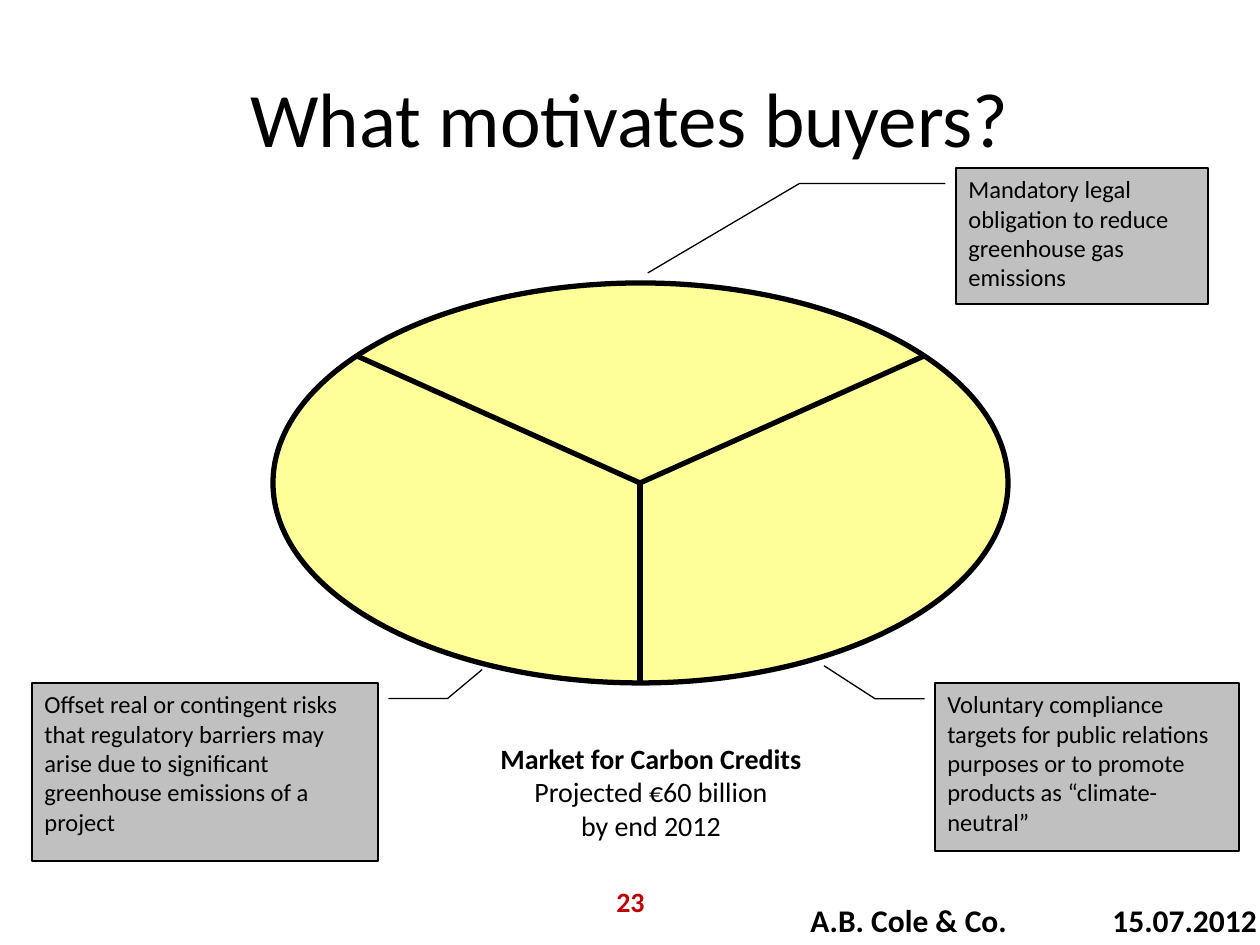
from dataclasses import dataclass
from typing import NamedTuple

from lxml.etree import SubElement
from pptx import Presentation
from pptx.dml.color import RGBColor
from pptx.enum.shapes import MSO_CONNECTOR as Connector, MSO_SHAPE as Shape
from pptx.enum.text import MSO_ANCHOR as Anchor, PP_ALIGN as Align
from pptx.oxml.ns import qn
from pptx.util import Emu, Pt

EMU_PER_PX = 914400 / 126
FONT = "Calibri"
BLACK = RGBColor(0x00, 0x00, 0x00)
YELLOW = RGBColor(0xFF, 0xFF, 0x99)
GREY = RGBColor(0xC0, 0xC0, 0xC0)
RED = RGBColor(0xC0, 0x00, 0x00)


def px(length: int) -> Emu:
    return Emu(round(length * EMU_PER_PX))


class Box(NamedTuple):
    left: int
    top: int
    width: int
    height: int

    def emu(self) -> list[Emu]:
        return [px(length) for length in self]


class Point(NamedTuple):
    x: int
    y: int


@dataclass(frozen=True)
class Motive:
    box: Box
    text: str
    leader: tuple[float, ...]


MARKET = Box(273, 283, 735, 400)
CENTRE = Point(MARKET.left + MARKET.width // 2, MARKET.top + MARKET.height // 2)
RIM = [Point(357, 356), Point(924, 356), Point(CENTRE.x, MARKET.top + MARKET.height)]

MOTIVES = [
    Motive(
        Box(956, 168, 252, 136),
        "Mandatory legal obligation to reduce greenhouse gas emissions",
        (0.115, -0.042, 0.115, -0.622, 0.772, -1.223),
    ),
    Motive(
        Box(32, 683, 346, 178),
        "Offset real or contingent risks that regulatory barriers may arise "
        "due to significant greenhouse emissions of a project",
        (0.088, 1.03, 0.088, 1.201, -0.075, 1.301),
    ),
    Motive(
        Box(935, 683, 304, 168),
        "Voluntary compliance targets for public relations purposes "
        "or to promote products as “climate-neutral”",
        (0.094, -0.034, 0.094, -0.197, -0.103, -0.365),
    ),
]


def add_run(paragraph, text: str, size: int, bold: bool = False, color: RGBColor = BLACK) -> None:
    run = paragraph.add_run()
    run.text = text
    run.font.name = FONT
    run.font.size = Pt(size)
    run.font.bold = bold
    run.font.color.rgb = color


def style(shape, fill: RGBColor, weight: float) -> None:
    shape.shadow.inherit = False
    shape.fill.solid()
    shape.fill.fore_color.rgb = fill
    shape.line.color.rgb = BLACK
    shape.line.width = Pt(weight)


def add_divider(slide, start: Point, end: Point) -> None:
    divider = slide.shapes.add_connector(
        Connector.STRAIGHT, px(start.x), px(start.y), px(end.x), px(end.y)
    )
    divider.line.color.rgb = BLACK
    divider.line.width = Pt(3)
    SubElement(divider._element.spPr, qn("a:effectLst"))


def add_motive(slide, motive: Motive) -> None:
    callout = slide.shapes.add_shape(Shape.LINE_CALLOUT_2, *motive.box.emu())
    style(callout, GREY, 0.75)
    for index, value in enumerate(motive.leader):
        callout.adjustments[index] = value
    frame = callout.text_frame
    frame.word_wrap = True
    frame.vertical_anchor = Anchor.TOP
    paragraph = frame.paragraphs[0]
    paragraph.alignment = Align.LEFT
    add_run(paragraph, motive.text, 14)


def add_label(slide, box: Box, align: Align, anchor: Anchor = Anchor.TOP):
    frame = slide.shapes.add_textbox(*box.emu()).text_frame
    frame.word_wrap = True
    frame.vertical_anchor = anchor
    paragraph = frame.paragraphs[0]
    paragraph.alignment = align
    return frame, paragraph


def add_footer(slide) -> None:
    frame, paragraph = add_label(slide, Box(798, 895, 462, 50), Align.LEFT)
    frame.margin_right = 0
    tabs = SubElement(paragraph._p.get_or_add_pPr(), qn("a:tabLst"))
    SubElement(tabs, qn("a:tab"), pos=str(px(302)), algn="l")
    add_run(paragraph, "A.B. Cole & Co.\t15.07.2012", 18, bold=True)


def main() -> None:
    deck = Presentation()
    deck.slide_width, deck.slide_height = px(1260), px(945)
    slide = deck.slides.add_slide(deck.slide_layouts[5])

    title = slide.shapes.title
    title.left, title.top, title.width, title.height = Box(63, 38, 1134, 157).emu()
    title.text_frame.vertical_anchor = Anchor.MIDDLE
    heading = title.text_frame.paragraphs[0]
    heading.alignment = Align.CENTER
    add_run(heading, "What motivates buyers?", 44)

    market = slide.shapes.add_shape(Shape.OVAL, *MARKET.emu())
    style(market, YELLOW, 3)
    for point in RIM:
        add_divider(slide, point, CENTRE)

    _, caption = add_label(slide, Box(441, 735, 420, 113), Align.CENTER)
    add_run(caption, "Market for Carbon Credits", 16, bold=True)
    for line in ("Projected €60 billion", "by end 2012"):
        caption.add_line_break()
        add_run(caption, line, 16)

    for motive in MOTIVES:
        add_motive(slide, motive)

    add_footer(slide)
    _, page_number = add_label(slide, Box(431, 876, 399, 50), Align.CENTER, Anchor.MIDDLE)
    add_run(page_number, "23", 16, bold=True, color=RED)

    deck.save("out.pptx")


if __name__ == "__main__":
    main()
